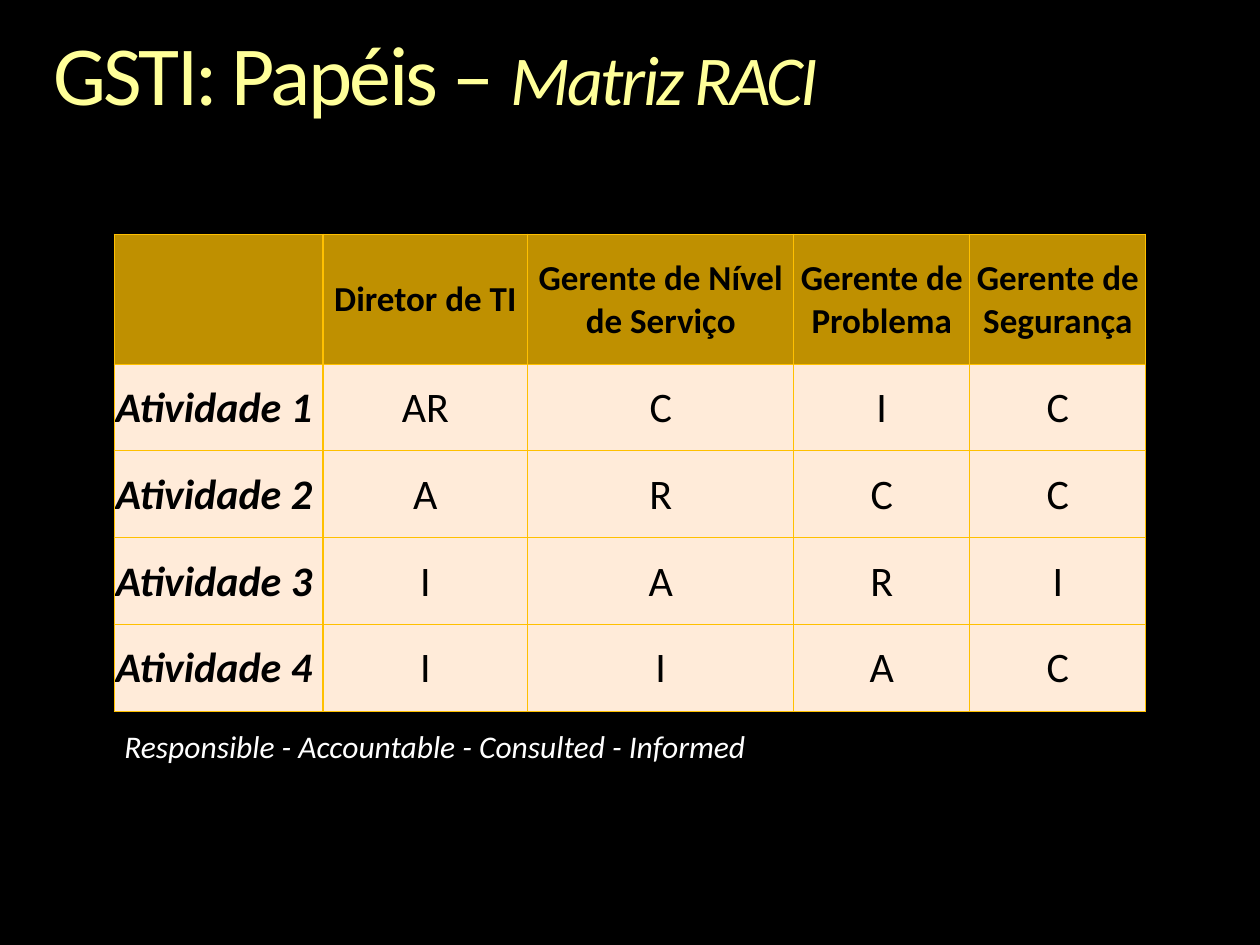
from dataclasses import dataclass
from typing import NamedTuple

from lxml import etree
from pptx import Presentation
from pptx.dml.color import RGBColor
from pptx.enum.text import MSO_ANCHOR, MSO_AUTO_SIZE, PP_ALIGN
from pptx.oxml.ns import qn
from pptx.util import Cm, Pt

LEFT, CENTER, JUSTIFY = PP_ALIGN.LEFT, PP_ALIGN.CENTER, PP_ALIGN.JUSTIFY
MIDDLE = MSO_ANCHOR.MIDDLE
GROW = MSO_AUTO_SIZE.SHAPE_TO_FIT_TEXT
TITLE_ONLY = 5


@dataclass(frozen=True)
class Theme:
    font: str = "Calibri"
    background: str = "000000"
    title: str = "FFFF99"
    header_fill: str = "BF9000"
    body_fill: str = "FFEBD9"
    border: str = "FFC000"
    cell_text: str = "000000"
    caption: str = "FFFFFF"
    title_size: int = 48
    subtitle_size: int = 40
    body_size: int = 24
    header_size: int = 20
    caption_size: int = 18
    border_width: float = 0.75


class Activity(NamedTuple):
    name: str
    roles: tuple[str, ...]


THEME = Theme()
HEADERS = ("", "Diretor de TI", "Gerente de Nível de Serviço",
           "Gerente de Problema", "Gerente de Segurança")
ACTIVITIES = (
    Activity("Atividade 1", ("AR", "C", "I", "C")),
    Activity("Atividade 2", ("A", "R", "C", "C")),
    Activity("Atividade 3", ("I", "A", "R", "I")),
    Activity("Atividade 4", ("I", "I", "A", "C")),
)
COLUMN_WIDTHS = (4.21, 4.13, 5.36, 3.55, 3.55)
HEADER_HEIGHT, ROW_HEIGHT = 2.62, 1.75


def add_text(para, text: str, *, size: float, color: str, bold: bool = False,
             italic: bool = False, align=LEFT, spacing: float = 0) -> None:
    para.alignment = align
    span = para.add_run()
    span.text = text
    font = span.font
    font.name, font.size = THEME.font, Pt(size)
    font.bold, font.italic = bold, italic
    font.color.rgb = RGBColor.from_string(color)
    if spacing:
        font._element.set("spc", str(round(spacing * 100)))


def set_margins(target, left: float, top: float, right: float, bottom: float) -> None:
    target.margin_left, target.margin_top = Cm(left), Cm(top)
    target.margin_right, target.margin_bottom = Cm(right), Cm(bottom)


def set_borders(cell) -> None:
    properties = cell._tc.get_or_add_tcPr()
    for side in ("a:lnL", "a:lnR", "a:lnT", "a:lnB"):
        line = etree.SubElement(properties, qn(side), w=str(Pt(THEME.border_width)))
        fill = etree.SubElement(line, qn("a:solidFill"))
        etree.SubElement(fill, qn("a:srgbClr"), val=THEME.border)


def fill_cell(cell, text: str, fill: str, **text_format) -> None:
    set_borders(cell)
    cell.fill.solid()
    cell.fill.fore_color.rgb = RGBColor.from_string(fill)
    cell.vertical_anchor = MIDDLE
    set_margins(cell, 0.03, 0.03, 0.03, 0)
    if text:
        add_text(cell.text_frame.paragraphs[0], text, color=THEME.cell_text, **text_format)


def add_title(page) -> None:
    title = page.shapes.title
    title.left, title.top, title.width, title.height = Cm(1.07), Cm(0.64), Cm(23.29), Cm(1.86)
    frame = title.text_frame
    frame.word_wrap, frame.auto_size = True, GROW
    set_margins(frame, 0, 0, 0, 0)
    para = frame.paragraphs[0]
    para.line_spacing = 0.9
    add_text(para, "GSTI: Papéis – ", size=THEME.title_size, color=THEME.title, spacing=-1.5)
    add_text(para, "Matriz RACI", size=THEME.subtitle_size, color=THEME.title,
             italic=True, spacing=-1.5)


def add_matrix(page) -> None:
    row_count = len(ACTIVITIES) + 1
    height = HEADER_HEIGHT + ROW_HEIGHT * len(ACTIVITIES)
    table = page.shapes.add_table(row_count, len(HEADERS), Cm(2.3), Cm(4.72),
                                  Cm(sum(COLUMN_WIDTHS)), Cm(height)).table
    for column, width in zip(table.columns, COLUMN_WIDTHS):
        column.width = Cm(width)
    for index, row in enumerate(table.rows):
        row.height = Cm(ROW_HEIGHT if index else HEADER_HEIGHT)

    # Header row
    for column, header in enumerate(HEADERS):
        fill_cell(table.cell(0, column), header, THEME.header_fill,
                  size=THEME.header_size, bold=True, align=CENTER)

    # One row per activity
    for row, activity in enumerate(ACTIVITIES, start=1):
        fill_cell(table.cell(row, 0), activity.name, THEME.body_fill,
                  size=THEME.body_size, bold=True, italic=True, align=JUSTIFY)
        for column, role in enumerate(activity.roles, start=1):
            fill_cell(table.cell(row, column), role, THEME.body_fill,
                      size=THEME.body_size, align=CENTER)


def add_caption(page) -> None:
    box = page.shapes.add_textbox(Cm(2.26), Cm(14.53), Cm(13.36), Cm(1.02))
    frame = box.text_frame
    frame.word_wrap, frame.auto_size = False, GROW
    add_text(frame.paragraphs[0], "Responsible - Accountable - Consulted - Informed",
             size=THEME.caption_size, color=THEME.caption, italic=True)


def main() -> None:
    deck = Presentation()
    deck.slide_width, deck.slide_height = Cm(25.4), Cm(19.05)
    page = deck.slides.add_slide(deck.slide_layouts[TITLE_ONLY])
    page.background.fill.solid()
    page.background.fill.fore_color.rgb = RGBColor.from_string(THEME.background)
    add_title(page)
    add_matrix(page)
    add_caption(page)
    deck.save("out.pptx")


if __name__ == "__main__":
    main()
